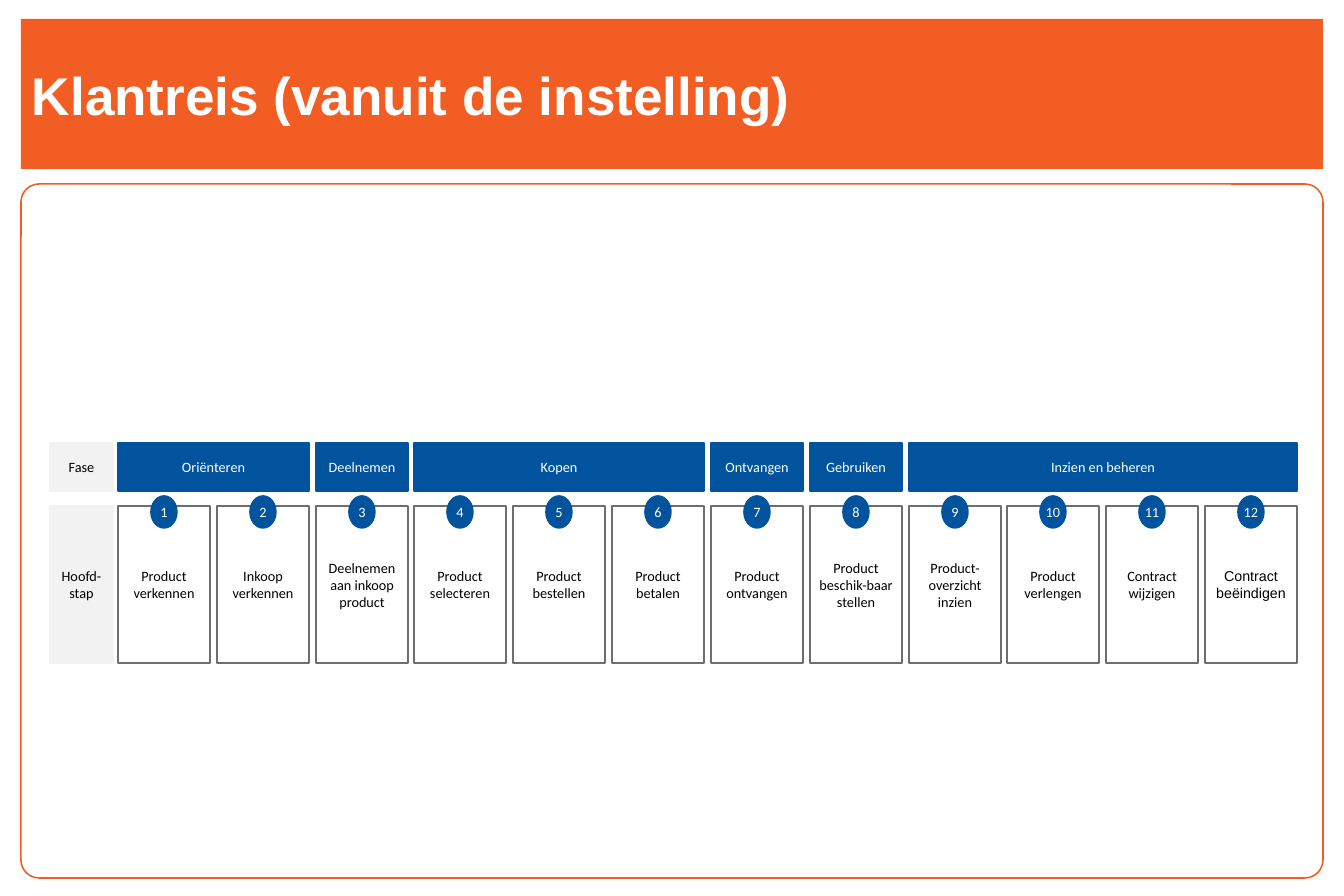
from pptx import Presentation
from pptx.dml.color import RGBColor
from pptx.enum.shapes import MSO_SHAPE
from pptx.enum.text import MSO_ANCHOR, PP_ALIGN
from pptx.util import Pt

RECT, ROUND, OVAL = MSO_SHAPE.RECTANGLE, MSO_SHAPE.ROUNDED_RECTANGLE, MSO_SHAPE.OVAL
LEFT, CENTER = PP_ALIGN.LEFT, PP_ALIGN.CENTER
MIDDLE = MSO_ANCHOR.MIDDLE

EMU_PER_PX = 8035
ORANGE, BLUE, GREY, PALE = "F15D22", "01539D", "6D6E71", "F2F2F2"
WHITE, BLACK = "FFFFFF", "000000"

FIRST_LEFT, LAST_LEFT, STEP_WIDTH = 118, 1205, 92
LABEL_LEFT, LABEL_WIDTH = 50, 63
PHASE_TOP, PHASE_HEIGHT = 443, 48
STEP_TOP, STEP_HEIGHT = 506, 157
BADGE_TOP, BADGE_WIDTH, BADGE_HEIGHT = 496, 26, 32

PHASES = [
    ("Oriënteren", ["Product verkennen", "Inkoop verkennen"]),
    ("Deelnemen", ["Deelnemen aan inkoop product"]),
    ("Kopen", ["Product selecteren", "Product bestellen", "Product betalen"]),
    ("Ontvangen", ["Product ontvangen"]),
    ("Gebruiken", ["Product beschik-baar stellen"]),
    ("Inzien en beheren", ["Product-overzicht inzien", "Product verlengen",
                           "Contract wijzigen", "Contract beëindigen"]),
]
STEPS = [step for _, steps in PHASES for step in steps]


def px(n):
    return n * EMU_PER_PX


def color(value):
    return RGBColor.from_string(value)


def step_left(i):
    return FIRST_LEFT + round((LAST_LEFT - FIRST_LEFT) * i / (len(STEPS) - 1))


class JourneySlide:
    """Draws the elements of a customer journey on one slide."""

    def __init__(self, slide):
        self.slide = slide
        self.font, self.size = "Calibri", 9

    def shape(self, kind, x, y, w, h, fill=None, line=None):
        sp = self.slide.shapes.add_shape(kind, px(x), px(y), px(w), px(h))
        sp.shadow.inherit = False
        if fill:
            sp.fill.solid()
            sp.fill.fore_color.rgb = color(fill)
        else:
            sp.fill.background()
        if line:
            sp.line.color.rgb = color(line)
            sp.line.width = Pt(1)
        else:
            sp.line.fill.background()
        return sp

    def text(self, sp, text, ink, font=None, size=None, bold=False,
             align=CENTER, side=0, edge=6):
        tf = sp.text_frame
        tf.word_wrap = True
        tf.vertical_anchor = MIDDLE
        tf.margin_left = tf.margin_right = px(side)
        tf.margin_top = tf.margin_bottom = px(edge)
        p = tf.paragraphs[0]
        p.text = text
        p.alignment = align
        p.font.name = font or self.font
        p.font.size = Pt(size or self.size)
        p.font.bold = bold
        p.font.color.rgb = color(ink)

    def frame(self):
        sp = self.shape(ROUND, 21, 184, 1302, 694, line=ORANGE)
        sp.adjustments[0] = 0.026

    def title(self, text):
        sp = self.shape(RECT, 21, 19, 1302, 150, ORANGE)
        self.text(sp, text, WHITE, "Arial", 33.6, True, LEFT, side=11, edge=0)

    def label(self, text, y, h):
        sp = self.shape(RECT, LABEL_LEFT, y, LABEL_WIDTH, h, PALE, PALE)
        self.text(sp, text, BLACK, side=2)

    def phase(self, text, first, count):
        x = step_left(first)
        w = step_left(first + count - 1) + STEP_WIDTH - x
        sp = self.shape(RECT, x, PHASE_TOP, w, PHASE_HEIGHT, BLUE, BLUE)
        self.text(sp, text, WHITE)

    def step(self, i, text, font=None):
        sp = self.shape(RECT, step_left(i), STEP_TOP, STEP_WIDTH, STEP_HEIGHT, WHITE, GREY)
        self.text(sp, text, BLACK, font, side=4)

    def badge(self, i):
        x = step_left(i) + (STEP_WIDTH - BADGE_WIDTH) // 2
        sp = self.shape(OVAL, x, BADGE_TOP, BADGE_WIDTH, BADGE_HEIGHT, BLUE, BLUE)
        self.text(sp, str(i + 1), WHITE)


def main():
    prs = Presentation()
    prs.slide_width, prs.slide_height = px(1344), px(896)
    s = JourneySlide(prs.slides.add_slide(prs.slide_layouts[6]))
    s.frame()
    s.title("Klantreis (vanuit de instelling)")
    s.label("Fase", PHASE_TOP, PHASE_HEIGHT)
    s.label("Hoofd-stap", STEP_TOP, STEP_HEIGHT)
    first = 0
    for name, steps in PHASES:
        s.phase(name, first, len(steps))
        first += len(steps)
    for i, step in enumerate(STEPS):
        s.step(i, step, "Arial" if step == STEPS[-1] else None)
        s.badge(i)
    prs.save("out.pptx")


if __name__ == "__main__":
    main()
